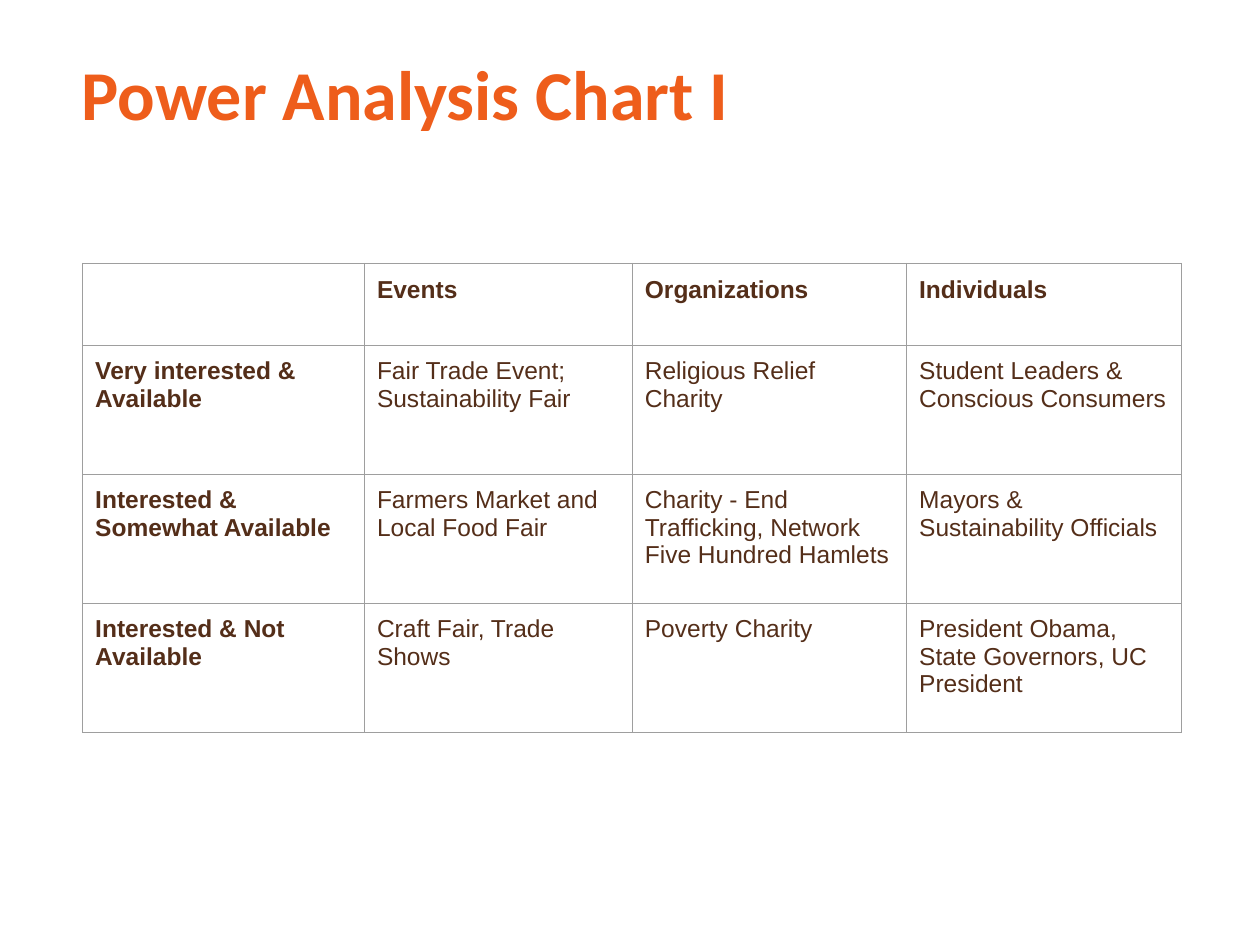
from lxml.etree import SubElement
from pptx import Presentation
from pptx.dml.color import RGBColor
from pptx.oxml.ns import qn
from pptx.util import Cm, Pt

ORANGE, BROWN, GREY = "EE5D1B", "542E19", "9E9E9E"
COL_WIDTHS = [5.68, 5.4, 5.53, 5.53]
ROW_HEIGHTS = [1.65, 2.6, 2.6, 2.6]
ROWS = [
    ["", "Events", "Organizations", "Individuals"],
    ["Very interested & Available", "Fair Trade Event; Sustainability Fair",
     "Religious Relief Charity", "Student Leaders & Conscious Consumers"],
    ["Interested &\nSomewhat Available", "Farmers Market and Local Food Fair",
     "Charity - End Trafficking, Network Five Hundred Hamlets",
     "Mayors & Sustainability Officials"],
    ["Interested & Not Available", "Craft Fair, Trade Shows",
     "Poverty Charity", "President Obama, State Governors, UC President"],
]


def rgb(color):
    return RGBColor.from_string(color)


def write(tf, text, size=14, font="Arial", color=BROWN, bold=False):
    """Fill a text frame, one paragraph per line of text."""
    tf.word_wrap = True
    for i, line in enumerate(text.split("\n")):
        p = tf.paragraphs[0] if i == 0 else tf.add_paragraph()
        p.font.size = Pt(size)
        if not line:
            continue
        r = p.add_run()
        r.text = line
        r.font.size, r.font.name, r.font.bold = Pt(size), font, bold
        r.font.color.rgb = rgb(color)


def add_borders(cell, color=GREY, width=0.75):
    tcPr = cell._tc.get_or_add_tcPr()
    for i, side in enumerate(("a:lnL", "a:lnR", "a:lnT", "a:lnB")):
        ln = tcPr.makeelement(qn(side), {"w": str(Pt(width))})
        fill = SubElement(ln, qn("a:solidFill"))
        SubElement(fill, qn("a:srgbClr"), val=color)
        tcPr.insert(i, ln)  # borders come before the cell fill


def add_title(s, text):
    tb = s.shapes.add_textbox(Cm(1.4), Cm(0.89), Cm(21.03), Cm(1.96))
    write(tb.text_frame, text, size=40, font="Calibri", color=ORANGE, bold=True)


def add_grid(s, rows):
    frame = s.shapes.add_table(len(rows), len(rows[0]), Cm(1.67), Cm(5.31),
                               Cm(sum(COL_WIDTHS)), Cm(sum(ROW_HEIGHTS)))
    table = frame.table
    table.first_row = table.horz_banding = False
    for col, width in zip(table.columns, COL_WIDTHS):
        col.width = Cm(width)
    for row, height in zip(table.rows, ROW_HEIGHTS):
        row.height = Cm(height)
    for i, texts in enumerate(rows):
        for j, text in enumerate(texts):
            cell = table.cell(i, j)
            cell.margin_left = cell.margin_right = Cm(0.25)
            cell.margin_top = cell.margin_bottom = Cm(0.25)
            cell.fill.background()
            # Header row and label column are bold
            write(cell.text_frame, text, bold=i == 0 or j == 0)
            add_borders(cell)


def main():
    prs = Presentation()
    prs.slide_width, prs.slide_height = Cm(25.4), Cm(19.05)
    s = prs.slides.add_slide(prs.slide_layouts[6])
    add_title(s, "Power Analysis Chart I")
    add_grid(s, ROWS)
    prs.save("out.pptx")


if __name__ == "__main__":
    main()
